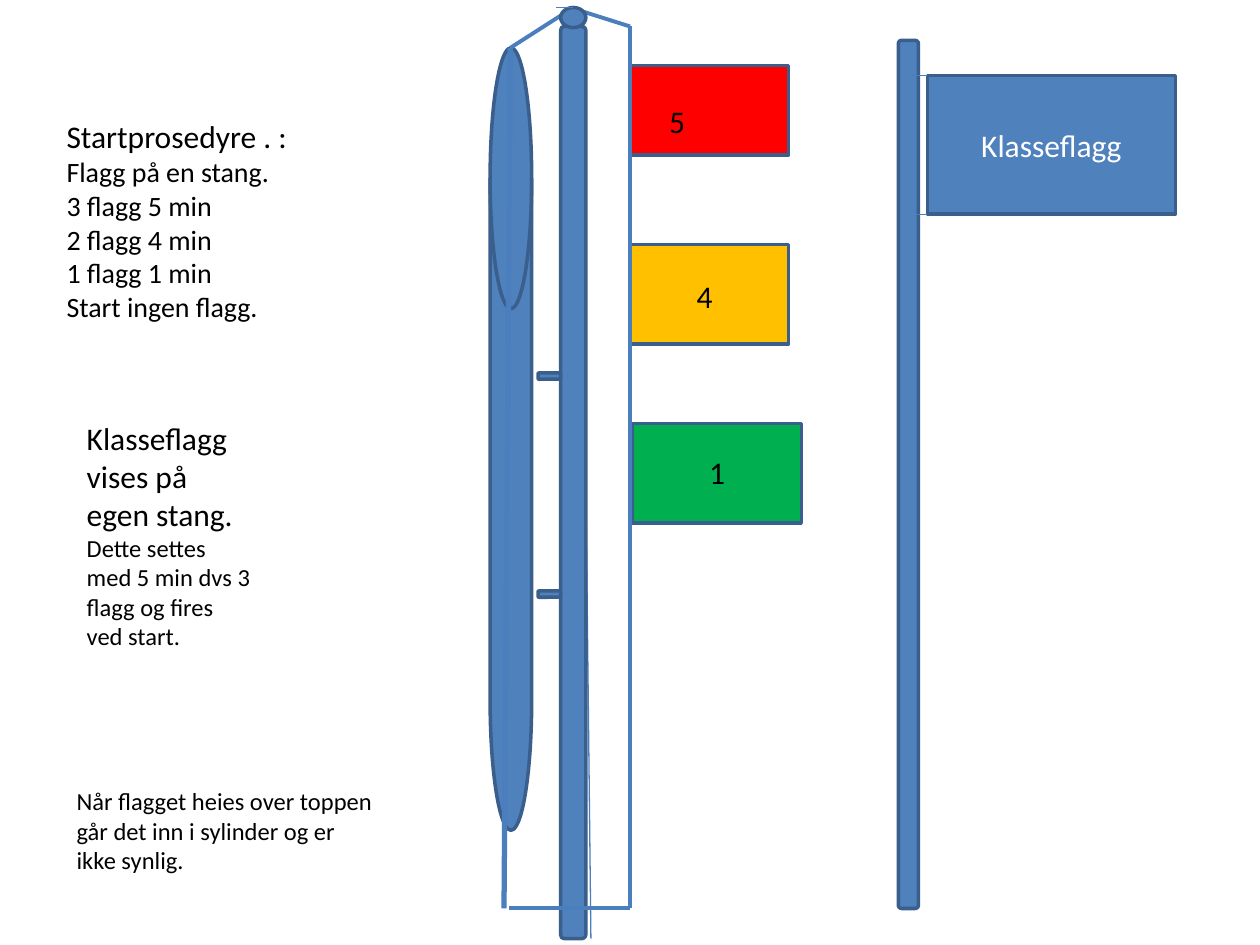
from lxml import etree
from pptx import Presentation
from pptx.dml.color import RGBColor
from pptx.enum.shapes import MSO_CONNECTOR, MSO_SHAPE
from pptx.enum.text import MSO_ANCHOR, MSO_AUTO_SIZE, PP_ALIGN
from pptx.oxml.ns import qn
from pptx.util import Pt

PX = 9144  # 100 px to the inch
FONT = "Calibri"

BLUE = RGBColor(0x4F, 0x81, 0xBD)
OUTLINE = RGBColor(0x3A, 0x5F, 0x8C)
ROPE = RGBColor(0x4B, 0x7E, 0xBC)
RED = RGBColor(0xFF, 0x00, 0x00)
AMBER = RGBColor(0xFF, 0xC0, 0x00)
GREEN = RGBColor(0x00, 0xB0, 0x50)
BLACK = RGBColor(0, 0, 0)
WHITE = RGBColor(0xFF, 0xFF, 0xFF)

RECTANGLE = MSO_SHAPE.RECTANGLE
ROUNDED = MSO_SHAPE.ROUNDED_RECTANGLE
ELLIPSE = MSO_SHAPE.OVAL
CYLINDER = MSO_SHAPE.FLOWCHART_MAGNETIC_DISK
STRAIGHT = MSO_CONNECTOR.STRAIGHT
MIDDLE = MSO_ANCHOR.MIDDLE
CENTER = PP_ALIGN.CENTER
GROW = MSO_AUTO_SIZE.SHAPE_TO_FIT_TEXT


def add_solid(slide, kind, left, top, width, height, fill=BLUE):
    shape = slide.shapes.add_shape(kind, left * PX, top * PX, width * PX, height * PX)
    shape.shadow.inherit = False
    shape.fill.solid()
    shape.fill.fore_color.rgb = fill
    shape.line.color.rgb = OUTLINE
    shape.line.width = Pt(2)
    return shape


def add_line(slide, start_x, start_y, end_x, end_y, weight=0.75):
    line = slide.shapes.add_connector(
        STRAIGHT, start_x * PX, start_y * PX, end_x * PX, end_y * PX)
    line.line.color.rgb = ROPE
    line.line.width = Pt(weight)
    etree.SubElement(line._element.spPr, qn("a:effectLst"))


def set_font(paragraph, size, color):
    paragraph.font.name = FONT
    paragraph.font.size = Pt(size)
    paragraph.font.color.rgb = color


def add_text(slide, left, top, width, height, lines):
    """Each line is a pair of text and size."""
    box = slide.shapes.add_textbox(left * PX, top * PX, width * PX, height * PX)
    frame = box.text_frame
    frame.word_wrap = True
    frame.auto_size = GROW
    for index, (text, size) in enumerate(lines):
        paragraph = frame.add_paragraph() if index else frame.paragraphs[0]
        paragraph.text = text
        set_font(paragraph, size, BLACK)


def draw_start_pole(slide, left, top):
    def solid(kind, x, y, width, height, fill=BLUE):
        add_solid(slide, kind, left + x, top + y, width, height, fill)

    def rope(start_x, start_y, end_x, end_y, weight=2.25):
        add_line(slide, left + start_x, top + start_y, left + end_x, top + end_y, weight)

    # Cylinder and pole
    solid(CYLINDER, 0, 32, 33, 621)
    rope(56, 15, 56, 739, 0.75)
    rope(72, 15, 80, 739, 0.75)
    solid(ROUNDED, 56, 15, 20, 724)

    # Flags
    solid(RECTANGLE, 111, 46, 126, 71, RED)
    solid(RECTANGLE, 111, 188, 126, 79, AMBER)
    solid(RECTANGLE, 113, 330, 134, 79, GREEN)

    # Halyard over the top of the pole
    rope(111, 15, 111, 715)
    rope(111, 15, 73, 3)
    rope(66, 0, 16, 32)
    solid(ELLIPSE, 56, 0, 20, 16)
    rope(52, 0, 66, 0, 0.75)
    rope(16, 32, 11, 715, 3)
    rope(15, 715, 111, 715)

    # Minutes on the flags
    for text, x, y, width, height in (
            ("5", 142, 70, 8, 71), ("4", 154, 209, 24, 40), ("1", 164, 349, 31, 40)):
        add_text(slide, left + x, top + y, width, height, [(text, 18)])

    # Brackets between cylinder and pole
    for y in (290, 463):
        solid(ROUNDED, 38, y, 18, 5)


def draw_class_pole(slide, left, top):
    add_solid(slide, ROUNDED, left, top, 16, 689)
    flag_left, flag_top, flag_height = left + 23, top + 28, 110
    flag = add_solid(slide, RECTANGLE, flag_left, flag_top, 197, flag_height)
    flag.text_frame.vertical_anchor = MIDDLE
    paragraph = flag.text_frame.paragraphs[0]
    paragraph.text = "Klasseflagg"
    paragraph.alignment = CENTER
    set_font(paragraph, 18, WHITE)

    # Ties from the flag to the pole
    for y, length in ((flag_top, 16), (flag_top + flag_height, 8)):
        add_line(slide, flag_left, y, flag_left - length, y)


def draw_notes(slide, left, top):
    steps = ("Flagg på en stang.", "3 flagg 5 min", "2 flagg 4 min",
             "1 flagg 1 min", "Start ingen flagg.")
    add_text(slide, left, top, 220, 175,
             [("Startprosedyre . :", 18)] + [(step, 16) for step in steps])
    add_text(slide, left + 16, top + 240, 150, 195, [
        ("Klasseflagg vises på egen stang.", 18),
        ("Dette settes med 5 min dvs 3 flagg og fires ved start.", 14)])
    add_text(slide, left + 8, top + 531, 260, 81, [
        ("Når flagget heies over toppen går det inn i sylinder og er ikke synlig.", 14)])


def main():
    presentation = Presentation()
    presentation.slide_width = 1000 * PX
    presentation.slide_height = 750 * PX
    slide = presentation.slides.add_slide(presentation.slide_layouts[6])
    draw_start_pole(slide, 389, 6)
    draw_notes(slide, 43, 88)
    draw_class_pole(slide, 713, 32)
    presentation.save("out.pptx")


if __name__ == "__main__":
    main()
